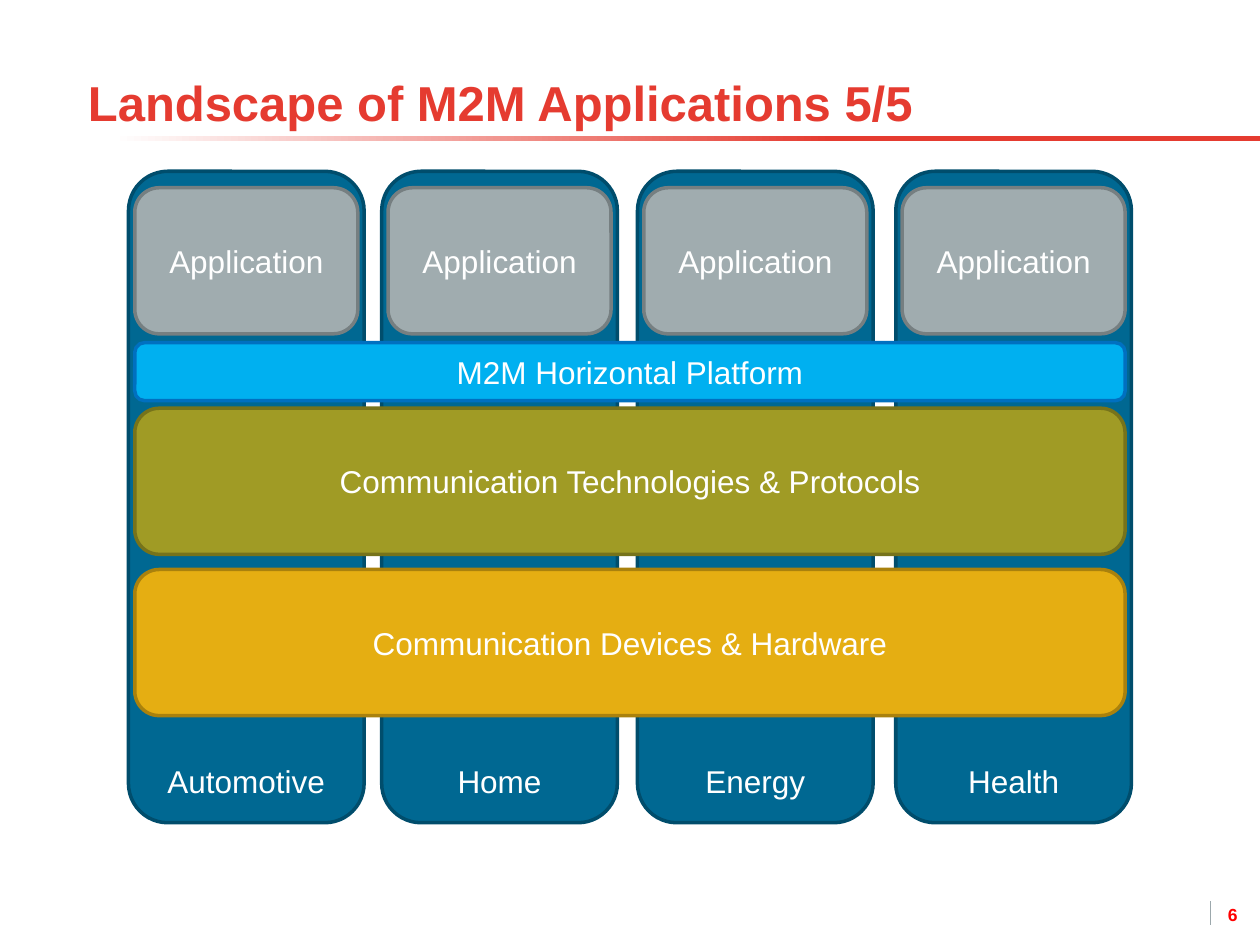
import pptx
import pptx.dml.color
import pptx.enum.shapes
import pptx.enum.text
import pptx.oxml
import pptx.util
from pptx.util import Inches

ALIGN = pptx.enum.text.PP_ALIGN
ANCHOR = pptx.enum.text.MSO_ANCHOR
SHAPE = pptx.enum.shapes.MSO_SHAPE

COLORS = {
    "white": "FFFFFF", "title": "E53B30", "number": "FF0000", "divider": "9CA8AC",
    "sector": "006892", "sector_edge": "004D6C",
    "application": "A0ACAF", "application_edge": "767F81",
    "platform": "00B0F0", "platform_edge": "0070C0",
    "protocols": "A09B25", "protocols_edge": "76731B",
    "devices": "E5AE12", "devices_edge": "A9810D",
}

# Sector columns: label and left edge
SECTORS = [("Automotive", 1.02), ("Home", 3.03), ("Energy", 5.06), ("Health", 7.11)]
SECTOR_WIDTH = 1.87
INSET = 0.05

# Layers across all sectors: label, colour, top, height
LAYERS = [
    ("Communication Devices & Hardware", "devices", 4.52, 1.16),
    ("Communication Technologies & Protocols", "protocols", 3.24, 1.16),
    ("M2M Horizontal Platform", "platform", 2.72, 0.46),
]


def rgb(name):
    return pptx.dml.color.RGBColor.from_string(COLORS[name])


def set_text(shape, text, size, color, align, anchor, bold=False):
    frame = shape.text_frame
    frame.word_wrap = True
    frame.vertical_anchor = anchor
    paragraph = frame.paragraphs[0]
    paragraph.text = text
    paragraph.alignment = align
    formats = {"name": "Arial", "size": pptx.util.Pt(size), "bold": bold}
    for attribute, value in formats.items():
        setattr(paragraph.runs[0].font, attribute, value)
    paragraph.runs[0].font.color.rgb = rgb(color)


def add_label(slide, box, *text_format, **options):
    label = slide.shapes.add_textbox(*map(Inches, box))
    set_text(label, *text_format, **options)


def add_block(slide, box, text, color, anchor=ANCHOR.MIDDLE):
    block = slide.shapes.add_shape(SHAPE.ROUNDED_RECTANGLE, *map(Inches, box))
    block.shadow.inherit = False
    block.fill.solid()
    block.fill.fore_color.rgb = rgb(color)
    block.line.color.rgb = rgb(color + "_edge")
    block.line.width = pptx.util.Pt(2)
    set_text(block, text, 18, "white", ALIGN.CENTER, anchor)
    return block


def add_gradient_rule(slide, box):
    rule = slide.shapes.add_shape(SHAPE.RECTANGLE, *map(Inches, box))
    rule.shadow.inherit = False
    rule.line.fill.background()
    rule.fill.gradient()
    rule.fill.gradient_angle = 0
    stops = [(0.09, "white"), (0.66, "title")]
    for stop, (position, color) in zip(rule.fill.gradient_stops, stops):
        stop.position = position
        stop.color.rgb = rgb(color)


def add_divider(slide, start, end):
    divider = slide.shapes.add_connector(
        pptx.enum.shapes.MSO_CONNECTOR.STRAIGHT, *map(Inches, start + end))
    divider.line.color.rgb = rgb("divider")
    divider.line.width = pptx.util.Pt(0.75)
    properties = divider.element.spPr
    properties.append(pptx.oxml.parse_xml(
        '<a:effectLst xmlns:a="http://schemas.openxmlformats.org/drawingml/2006/main"/>'))


def main():
    presentation = pptx.Presentation()
    presentation.slide_width = Inches(10)
    presentation.slide_height = Inches(7.5)
    slide = presentation.slides.add_slide(presentation.slide_layouts[6])

    # Page number, title and rule
    add_label(slide, (9.47, 7.06, 0.45, 0.4), "6", 10, "number",
              ALIGN.RIGHT, ANCHOR.MIDDLE, bold=True)
    add_divider(slide, (9.61, 7.34), (9.61, 7.15))
    add_gradient_rule(slide, (0, 1.08, 10, 0.04))
    add_label(slide, (0.6, 0.26, 8.9, 0.83), "Landscape of M2M Applications 5/5",
              28, "title", ALIGN.LEFT, ANCHOR.BOTTOM, bold=True)

    # Sector columns, each with its application
    for name, left in SECTORS:
        column = add_block(slide, (left, 1.36, SECTOR_WIDTH, 5.17), name, "sector",
                           ANCHOR.BOTTOM)
        column.text_frame.margin_bottom = Inches(0.09)
        add_block(slide, (left + INSET, 1.49, SECTOR_WIDTH - 2 * INSET, 1.16),
                  "Application", "application")

    # Shared layers
    for text, color, top, height in LAYERS:
        add_block(slide, (1.07, top, 7.86, height), text, color)

    presentation.save("out.pptx")


if __name__ == "__main__":
    main()
